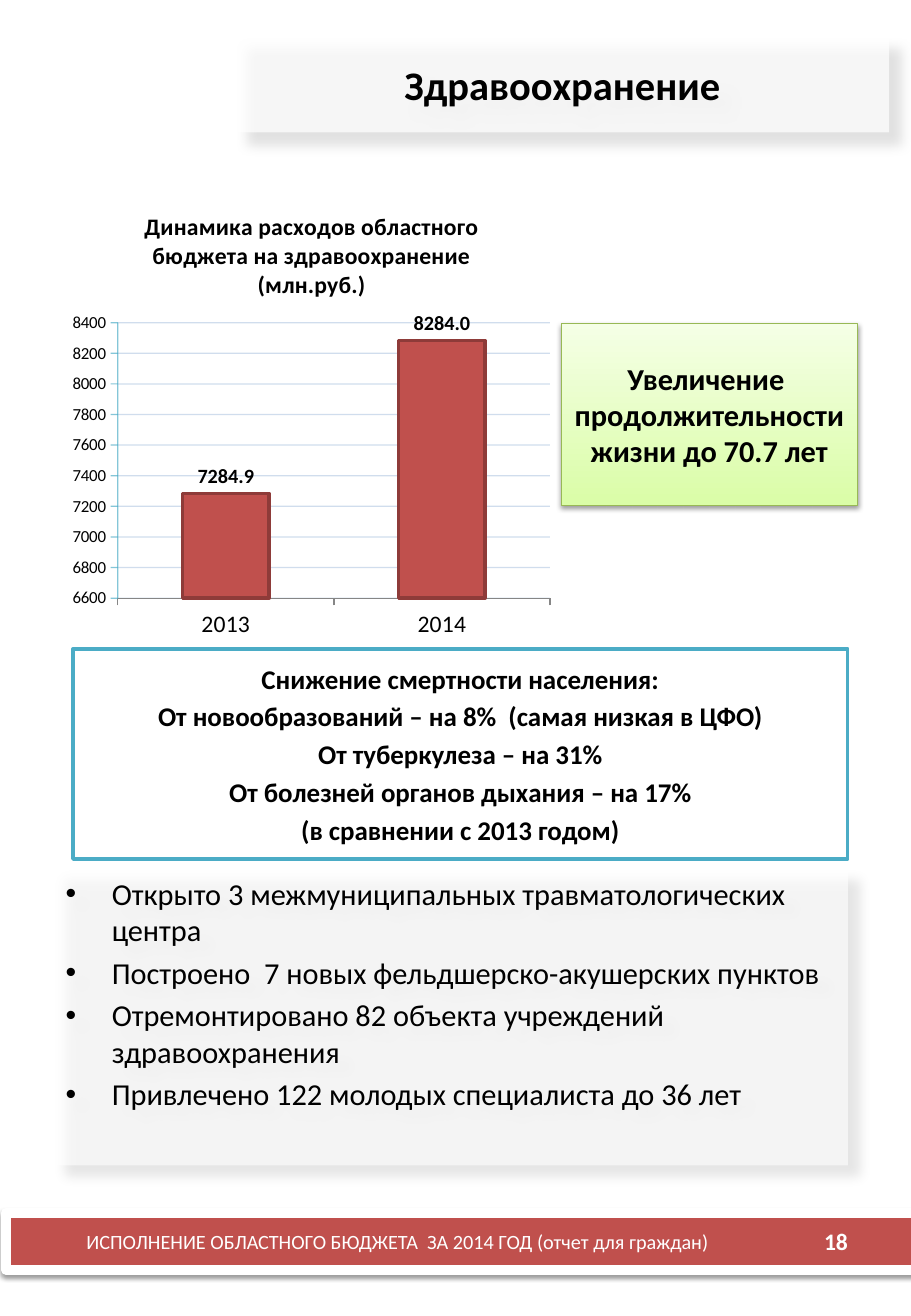
import lxml.etree
import pptx
import pptx.chart.data
import pptx.dml.color
import pptx.enum.chart
import pptx.enum.shapes
import pptx.enum.text
import pptx.oxml.ns
import pptx.util

Inches = pptx.util.Inches
Pt = pptx.util.Pt
RGBColor = pptx.dml.color.RGBColor
Align = pptx.enum.text.PP_ALIGN
Anchor = pptx.enum.text.MSO_ANCHOR
qn = pptx.oxml.ns.qn

FONT = "Calibri"
BLACK = RGBColor(0x00, 0x00, 0x00)
WHITE = RGBColor(0xFF, 0xFF, 0xFF)
RED = RGBColor(0xC0, 0x50, 0x4D)
DARK_RED = RGBColor(0x8E, 0x3B, 0x39)
TEAL = RGBColor(0x4B, 0xAC, 0xC6)
GRID_BLUE = RGBColor(0x4B, 0x7E, 0xBC)
AXIS_GREY = RGBColor(0x86, 0x86, 0x86)
GREEN_LINE = RGBColor(0x98, 0xB9, 0x55)
GREEN_LIGHT = RGBColor(0xF5, 0xFF, 0xE6)
GREEN_DEEP = RGBColor(0xDA, 0xFD, 0xA7)
SOFT_SHADOW = (16, 7, 10, 45)
TIGHT_SHADOW = (38, 3.1, 1.6, 90)


def style_font(font, size, color=BLACK, bold=False):
    font.name = FONT
    font.size = Pt(size)
    font.bold = bold
    font.color.rgb = color


def write_text(frame, text, size, color=BLACK, bold=False, align=Align.CENTER,
               anchor=Anchor.MIDDLE, bullet=None, spacing=0, inset=0.1):
    frame.word_wrap = True
    frame.auto_size = pptx.enum.text.MSO_AUTO_SIZE.NONE
    frame.vertical_anchor = anchor
    frame.margin_left = frame.margin_right = Inches(inset)
    for index, line in enumerate(text.split("\n")):
        paragraph = frame.paragraphs[0] if index == 0 else frame.add_paragraph()
        properties = paragraph._p.get_or_add_pPr()
        indent = Inches(0.38) if bullet else 0
        properties.set("marL", str(indent))
        properties.set("indent", str(-indent))
        if bullet:
            mark = lxml.etree.SubElement(properties, qn("a:buChar"))
            mark.set("char", bullet)
        else:
            lxml.etree.SubElement(properties, qn("a:buNone"))
        paragraph.alignment = align
        paragraph.space_before = Pt(spacing if index else 0)
        run = paragraph.add_run()
        run.text = line
        style_font(run.font, size, color, bold)


def place(shape, box):
    shape.left, shape.top, shape.width, shape.height = map(Inches, box)


def set_alpha(holder, percent):
    for color in holder.iter(qn("a:srgbClr")):
        alpha = lxml.etree.SubElement(color, qn("a:alpha"))
        alpha.set("val", str(percent * 1000))


def paint(shape, fill, alpha=100, line=None, line_width=0):
    shape.fill.solid()
    shape.fill.fore_color.rgb = fill
    set_alpha(shape.element.spPr, alpha)
    outline(shape, line, line_width)


def outline(shape, line, line_width):
    if line is None:
        shape.line.fill.background()
    else:
        shape.line.color.rgb = line
        shape.line.width = Pt(line_width)
    shape.shadow.inherit = False


def cast_shadow(shape, opacity, blur, distance, angle):
    effects = shape.element.spPr.find(qn("a:effectLst"))
    shadow = lxml.etree.SubElement(effects, qn("a:outerShdw"))
    shadow.set("blurRad", str(Pt(blur)))
    shadow.set("dist", str(Pt(distance)))
    shadow.set("dir", str(angle * 60000))
    shadow.set("algn", "tl")
    shadow.set("rotWithShape", "0")
    lxml.etree.SubElement(shadow, qn("a:srgbClr")).set("val", str(BLACK))
    set_alpha(shadow, opacity)


def add_rectangle(slide, box):
    return slide.shapes.add_shape(
        pptx.enum.shapes.MSO_SHAPE.RECTANGLE, *map(Inches, box))


def fill_title(title, box):
    place(title, box)
    paint(title, WHITE, alpha=70)
    cast_shadow(title, *SOFT_SHADOW)
    write_text(title.text_frame, "Здравоохранение", 24, bold=True)


def fill_achievements(body, box):
    place(body, box)
    paint(body, WHITE, alpha=60)
    cast_shadow(body, *SOFT_SHADOW)
    achievements = (
        "Открыто 3 межмуниципальных травматологических центра\n"
        "Построено  7 новых фельдшерско-акушерских пунктов\n"
        "Отремонтировано 82 объекта учреждений здравоохранения\n"
        "Привлечено 122 молодых специалиста до 36 лет")
    write_text(body.text_frame, achievements, 18, align=Align.LEFT,
               anchor=Anchor.TOP, bullet="•", spacing=3.6)


def fill_life_expectancy(body, box):
    place(body, box)
    body.fill.gradient()
    body.fill.gradient_angle = 90
    for stop, color in zip(body.fill.gradient_stops, (GREEN_DEEP, GREEN_LIGHT)):
        stop.color.rgb = color
    outline(body, GREEN_LINE, 0.75)
    cast_shadow(body, *TIGHT_SHADOW)
    write_text(body.text_frame, "Увеличение  продолжительности жизни до 70.7 лет",
               18, bold=True, inset=0.05)


def add_mortality(slide, box):
    panel = add_rectangle(slide, box)
    paint(panel, WHITE, alpha=38, line=TEAL, line_width=2)
    reductions = (
        "Снижение смертности населения:\n"
        "От новообразований – на 8%  (самая низкая в ЦФО)\n"
        "От туберкулеза – на 31%\n"
        "От болезней органов дыхания – на 17%\n"
        "(в сравнении с 2013 годом)")
    write_text(panel.text_frame, reductions, 16, bold=True, spacing=3.2)


def set_plot_layout(chart, left, top, width, height):
    plot_area = chart._chartSpace.chart.plotArea
    layout = plot_area.find(qn("c:layout"))
    if layout is None:
        layout = lxml.etree.Element(qn("c:layout"))
        plot_area.insert(0, layout)
    manual = lxml.etree.SubElement(layout, qn("c:manualLayout"))
    settings = (("layoutTarget", "inner"), ("xMode", "edge"), ("yMode", "edge"),
                ("x", left), ("y", top), ("w", width), ("h", height))
    for name, value in settings:
        lxml.etree.SubElement(manual, qn("c:" + name)).set("val", str(value))


def style_axis_line(line, color, alpha=100):
    line.color.rgb = color
    line.width = Pt(0.75)
    set_alpha(line.fill._xPr, alpha)


def add_spending_chart(slide, box):
    data = pptx.chart.data.CategoryChartData(number_format="0.0")
    data.categories = ["2013", "2014"]
    data.add_series("Series 1", (7284.9, 8284))
    chart = slide.shapes.add_chart(
        pptx.enum.chart.XL_CHART_TYPE.COLUMN_CLUSTERED, *map(Inches, box), data).chart
    style_font(chart.font, 10)
    chart.has_legend = False
    chart.has_title = True
    title_run = chart.chart_title.text_frame.paragraphs[0].add_run()
    title_run.text = "Динамика расходов областного бюджета на здравоохранение (млн.руб.)"
    style_font(title_run.font, 14, bold=True)
    chart.chart_title.include_in_layout = False
    set_plot_layout(chart, 0.11, 0.29, 0.87, 0.6)

    value_axis = chart.value_axis
    value_axis.minimum_scale, value_axis.maximum_scale = 6600, 8400
    value_axis.major_unit = 200
    value_axis.tick_labels.number_format = "0"
    value_axis.tick_labels.number_format_is_linked = False
    style_font(value_axis.tick_labels.font, 10)
    style_axis_line(value_axis.format.line, TEAL, 68)
    style_axis_line(value_axis.major_gridlines.format.line, GRID_BLUE, 25)
    style_font(chart.category_axis.tick_labels.font, 14)
    style_axis_line(chart.category_axis.format.line, AXIS_GREY)

    plot = chart.plots[0]
    plot.gap_width = 150
    plot.vary_by_categories = False
    series = plot.series[0]
    series.format.fill.solid()
    series.format.fill.fore_color.rgb = RED
    series.format.line.color.rgb = DARK_RED
    series.format.line.width = Pt(2)
    labels = series.data_labels
    labels.show_value = True
    labels.number_format = "0.0"
    labels.number_format_is_linked = False
    labels.position = pptx.enum.chart.XL_LABEL_POSITION.OUTSIDE_END
    style_font(labels.font, 12, bold=True)


def add_footer(slide, box):
    left, top, width, height = box
    bar = add_rectangle(slide, box)
    paint(bar, RED, line=WHITE, line_width=6)
    cast_shadow(bar, *TIGHT_SHADOW)
    report = "ИСПОЛНЕНИЕ ОБЛАСТНОГО БЮДЖЕТА  ЗА 2014 ГОД (отчет для граждан)"
    for text, offset, span, size, bold, align in (
            (report, 0.31, 5.83, 12, False, Align.CENTER),
            ("18", 6.38, 0.65, 14, True, Align.RIGHT)):
        caption = slide.shapes.add_textbox(
            *map(Inches, (left + offset, top + 0.08, span, height - 0.16)))
        write_text(caption.text_frame, text, size, WHITE, bold, align)


def main():
    presentation = pptx.Presentation()
    presentation.slide_width = Inches(7.5)
    presentation.slide_height = Inches(10.83)
    slide = presentation.slides.add_slide(presentation.slide_layouts[3])
    fill_title(slide.shapes.title, (1.94, 0.3, 5.38, 0.79))
    fill_achievements(slide.placeholders[1], (0.44, 7.15, 6.54, 2.44))
    fill_life_expectancy(slide.placeholders[2], (4.62, 2.66, 2.44, 1.5))
    add_spending_chart(slide, (0.52, 1.56, 4.09, 3.78))
    add_mortality(slide, (0.6, 5.34, 6.38, 1.73))
    add_footer(slide, (0.05, 9.98, 7.5, 0.47))
    presentation.save("out.pptx")


if __name__ == "__main__":
    main()
